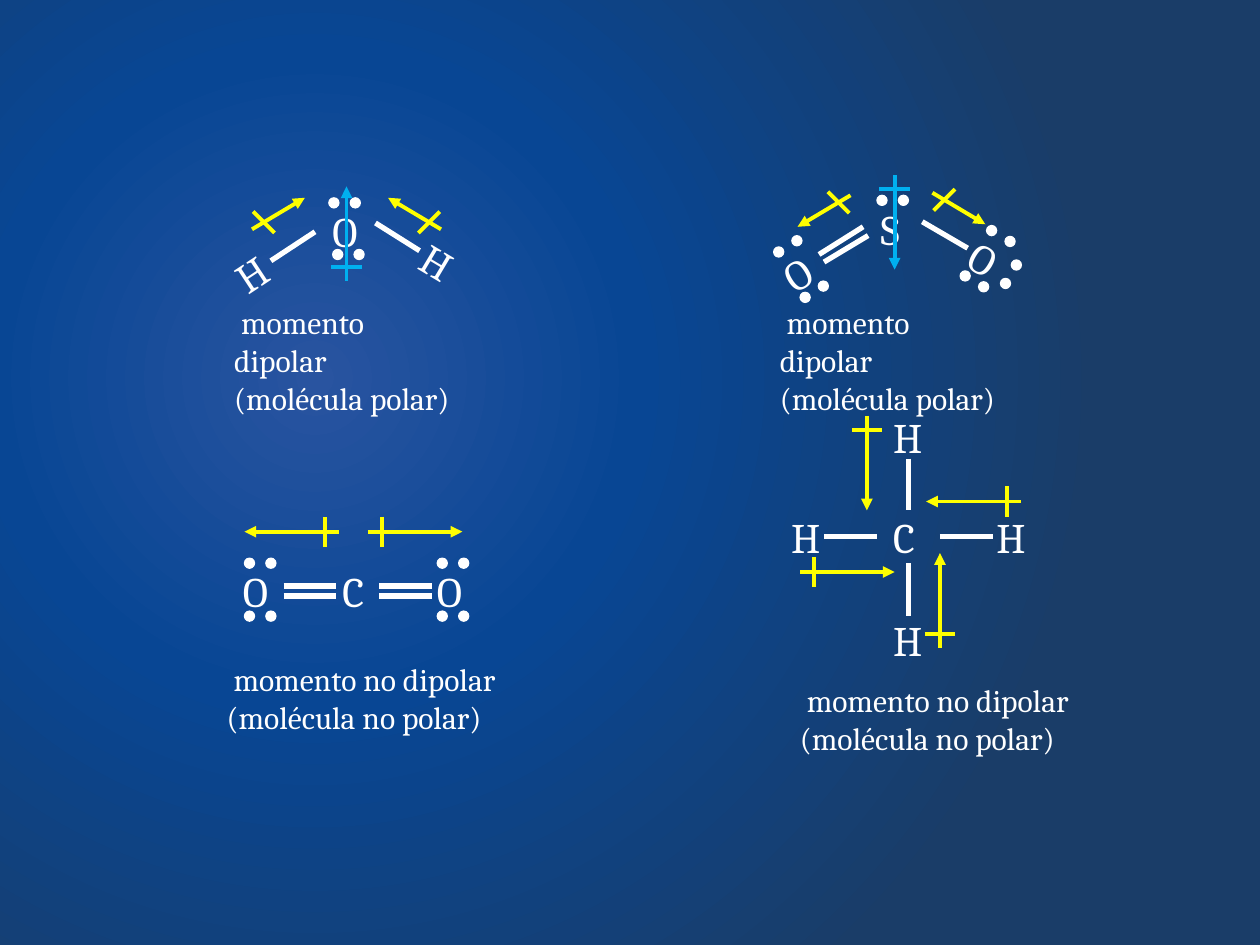
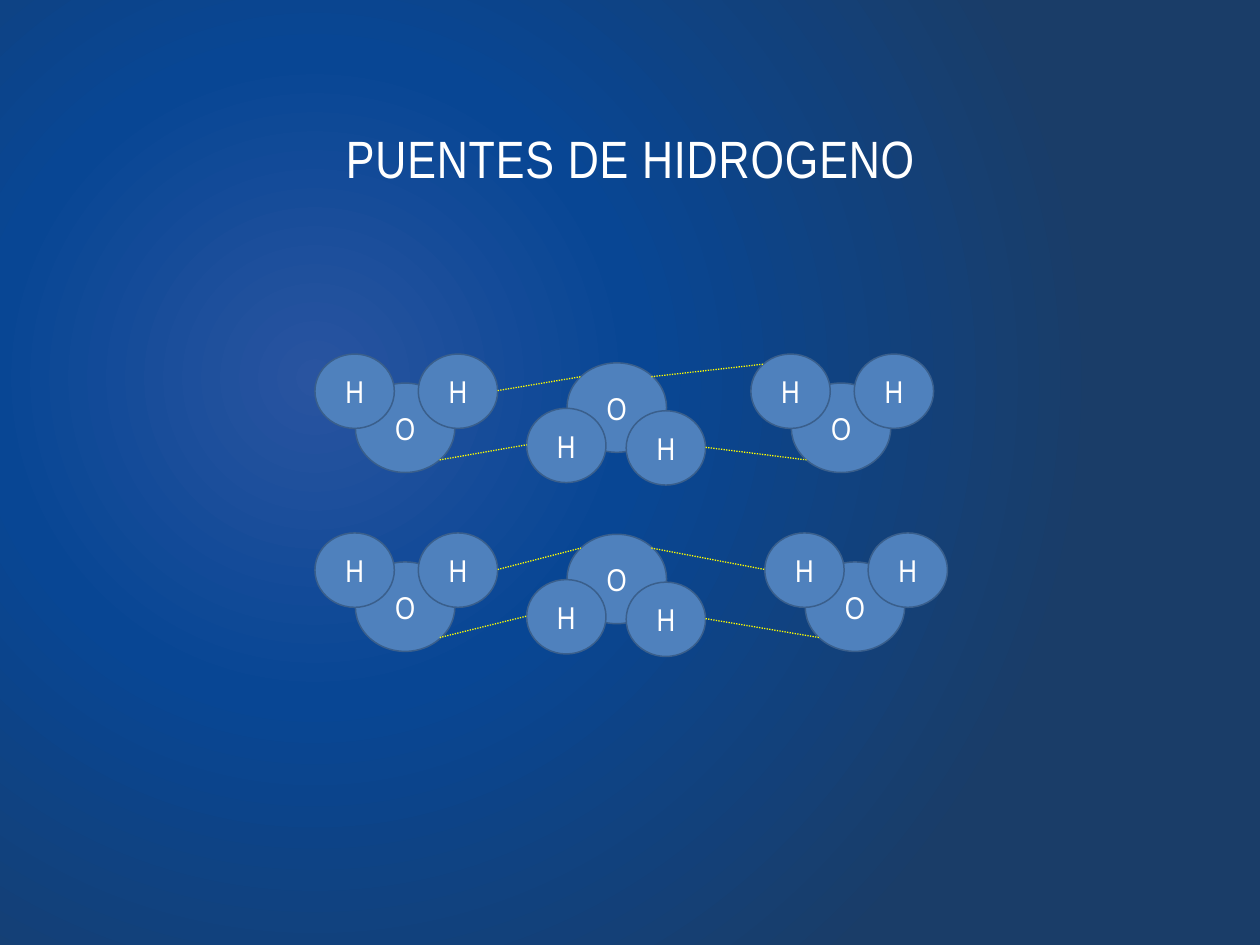
"""Builds two slides on dipole moments and hydrogen bonds."""
from math import atan2, cos, degrees, hypot, radians, sin
from lxml.etree import SubElement
from pptx import Presentation
from pptx.dml.color import RGBColor
from pptx.enum.dml import MSO_LINE
from pptx.enum.shapes import MSO_CONNECTOR, MSO_SHAPE
from pptx.enum.text import MSO_ANCHOR, PP_ALIGN
from pptx.oxml import parse_xml
from pptx.oxml.ns import nsdecls, qn
from pptx.util import Inches, Pt

WHITE, YELLOW, CYAN = "FFFFFF", "FFFF00", "00B0F0"
BALL, EDGE = "4F81BD", "3A5F8C"
STOPS = [(0, "2954A0"), (41, "084694"), (100, "1A3D68")]
SERIF, SANS = "Cambria", "Arial Narrow"

ATOMS = [
    ("O", 2.54, 1.58, 0), ("H", 3.26, 1.83, 30.8), ("H", 1.78, 1.92, 326.6),
    ("S", 6.89, 1.57, 0), ("O", 6.13, 1.91, 328.3), ("O", 7.61, 1.81, 30.5),
    ("C", 2.62, 4.44, 0), ("O", 1.83, 4.44, 0), ("O", 3.37, 4.44, 0),
    ("C", 6.99, 4.01, 0), ("H", 6.99, 3.22, 0), ("H", 6.99, 4.83, 0),
    ("H", 7.81, 4.01, 0), ("H", 6.18, 4.01, 0),
]
BONDS = [
    (2.98, 1.77, 3.33, 1.99), (2.15, 2.07, 2.5, 1.84),
    (6.54, 2.08, 6.89, 1.87), (6.5, 2.02, 6.85, 1.8), (7.32, 1.76, 7.68, 1.97),
    (7.46, 4.26, 7.88, 4.26), (6.54, 4.26, 6.96, 4.26),
    (7.21, 4.47, 7.21, 4.89), (7.21, 3.64, 7.21, 4.05),
] + [(x, y, x + 0.42, y) for x in (2.25, 3.01) for y in (4.65, 4.73)]
PAIRS = [
    (2.64, 1.98, 0), (2.61, 1.57, 0), (6.96, 1.55, 0),
    (6.14, 1.96, -31.7), (6.35, 2.32, -31.7),
    (7.83, 1.79, 30.5), (7.62, 2.15, 30.5), (7.94, 2.21, -59.5),
] + [(x, y, 0) for x in (1.94, 3.47) for y in (4.43, 4.85)]
DIPOLES = [
    (2, 1.82, 2.42, 1.57, YELLOW), (3.5, 1.82, 3.08, 1.57, YELLOW),
    (2.75, 2.23, 2.75, 1.48, CYAN),
    (2.69, 4.22, 1.94, 4.22, YELLOW), (2.92, 4.22, 3.67, 4.22, YELLOW),
    (6.75, 1.55, 6.33, 1.8, YELLOW), (7.4, 1.53, 7.82, 1.78, YELLOW),
    (7.1, 1.39, 7.1, 2.14, CYAN),
    (8.1, 3.98, 7.35, 3.98, YELLOW), (6.35, 4.54, 7.1, 4.54, YELLOW),
    (6.88, 3.3, 6.88, 4.05, YELLOW), (7.46, 5.14, 7.46, 4.39, YELLOW),
]
POLAR = [" momento dipolar", "(molécula polar)"]
APOLAR = [" momento no dipolar", "(molécula no polar)"]
NOTES = [
    (POLAR, 1.76, 2.36, 1.98), (POLAR, 6.09, 2.36, 1.98),
    ([" ".join(APOLAR)], 1.7, 5.19, 2.59), (APOLAR, 6.25, 5.36, 2.37),
]

TITLE = "PUENTES DE HIDROGENO"
UP = [(-0.32, 0.36), (0.47, 0.38)]
DOWN = [(-0.32, -0.23), (0.5, -0.23)]
WATERS = [
    (4.5, 2.88, UP), (2.82, 3.04, DOWN), (4.5, 4.24, UP),
    (6.28, 3.04, DOWN), (2.82, 4.46, DOWN), (6.39, 4.46, DOWN),
]
BRIDGES = [
    (3.95, 3.1, 4.61, 2.99), (3.49, 3.65, 4.18, 3.53),
    (5.17, 2.99, 6.06, 2.89), (5.6, 3.55, 6.4, 3.65),
    (3.95, 4.52, 4.61, 4.35), (3.49, 5.06, 4.18, 4.89),
    (5.17, 4.35, 6.07, 4.52), (5.6, 4.91, 6.5, 5.06),
]


def tint(code):
    return RGBColor.from_string(code)


def write(shape, lines, size, face, **look):
    frame = shape.text_frame
    frame.text = "\n".join(lines)
    frame.word_wrap = True
    frame.vertical_anchor = look.get("anchor", MSO_ANCHOR.TOP)
    for para in frame.paragraphs:
        para.alignment = look.get("align", PP_ALIGN.LEFT)
        font = para.runs[0].font
        for key, value in {"size": Pt(size), "name": face}.items():
            setattr(font, key, value)
        font.color.rgb = tint(WHITE)
    return frame


def label(slide, lines, box, size, face, **look):
    shape = slide.shapes.add_textbox(*map(Inches, box))
    shape.rotation = look.get("turn", 0)
    return write(shape, lines, size, face, **look)


def oval(slide, box, fill, edge, width):
    shape = slide.shapes.add_shape(MSO_SHAPE.OVAL, *map(Inches, box))
    shape.shadow.inherit = False
    shape.fill.solid()
    shape.fill.fore_color.rgb = tint(fill)
    shape.line.color.rgb = tint(edge)
    shape.line.width = Pt(width)
    return shape


def rule(slide, ends, color, width, dash=None, head=False):
    link = slide.shapes.add_connector(MSO_CONNECTOR.STRAIGHT, *map(Inches, ends))
    link.line.color.rgb = tint(color)
    link.line.width = Pt(width)
    if dash:
        link.line.dash_style = dash
    if head:
        SubElement(link.line._get_or_add_ln(), qn("a:tailEnd"), type="triangle")
    SubElement(link._element.spPr, qn("a:effectLst"))


def dipole(slide, x, y, far, low, color):
    rule(slide, (x, y, far, low), color, 2.25, head=True)
    dx, dy = far - x, low - y
    size = hypot(dx, dy)
    mid, top = x + 0.11 * dx / size, y + 0.11 * dy / size
    turn = radians(45 * round(degrees(atan2(dy, dx)) / 45) + 90)
    h, v = 0.12 * cos(turn), 0.12 * sin(turn)
    rule(slide, (mid - h, top - v, mid + h, top + v), color, 2.25)


def paint(master):
    master.background.fill.solid()
    stops = "".join(
        f'<a:gs pos="{pos * 1000}"><a:srgbClr val="{code}"/></a:gs>'
        for pos, code in STOPS)
    grad = parse_xml(
        f'<a:gradFill {nsdecls("a")} rotWithShape="1"><a:gsLst>{stops}</a:gsLst>'
        '<a:path path="circle"><a:fillToRect l="50000" t="80000" r="100000"'
        ' b="100000"/></a:path></a:gradFill>')
    back = master.element.find(".//" + qn("p:bgPr"))
    back.replace(back[0], grad)


def polar(slide):
    for ends in BONDS:
        rule(slide, ends, WHITE, 3)
    for x, y, turn in PAIRS:
        for step in (0, 0.17):
            dx, dy = step * cos(radians(turn)), step * sin(radians(turn))
            oval(slide, (x + dx, y + dy, 0.08, 0.08), WHITE, WHITE, 0.75)
    for name, x, y, turn in ATOMS:
        label(slide, [name], (x, y, 0.44, 0.5), 24, SERIF, turn=turn)
    for arrow in DIPOLES:
        dipole(slide, *arrow)
    for lines, x, y, width in NOTES:
        label(slide, lines, (x, y, width, 0.7), 18, SERIF)


def water(slide):
    mid = {"align": PP_ALIGN.CENTER}
    frame = label(slide, [TITLE], (0.67, 0.3, 8.67, 1.25), 30, SANS,
                  anchor=MSO_ANCHOR.BOTTOM, **mid)
    frame.paragraphs[0].runs[0].font._element.set("spc", "50")
    for x, y, spots in WATERS:
        balls = [("O", x, y, 0.79, 0.71)]
        balls += [("H", x + dx, y + dy, 0.63, 0.59) for dx, dy in spots]
        for name, *box in balls:
            ball = oval(slide, box, BALL, EDGE, 0.85)
            write(ball, [name], 18, SANS, anchor=MSO_ANCHOR.MIDDLE, **mid)
    for ends in BRIDGES:
        rule(slide, ends, YELLOW, 0.75, MSO_LINE.ROUND_DOT)


def main():
    deck = Presentation()
    deck.slide_width, deck.slide_height = Inches(10), Inches(7.5)
    paint(deck.slide_master)
    for draw in (polar, water):
        draw(deck.slides.add_slide(deck.slide_layouts[6]))
    deck.save("out.pptx")


if __name__ == "__main__":
    main()
